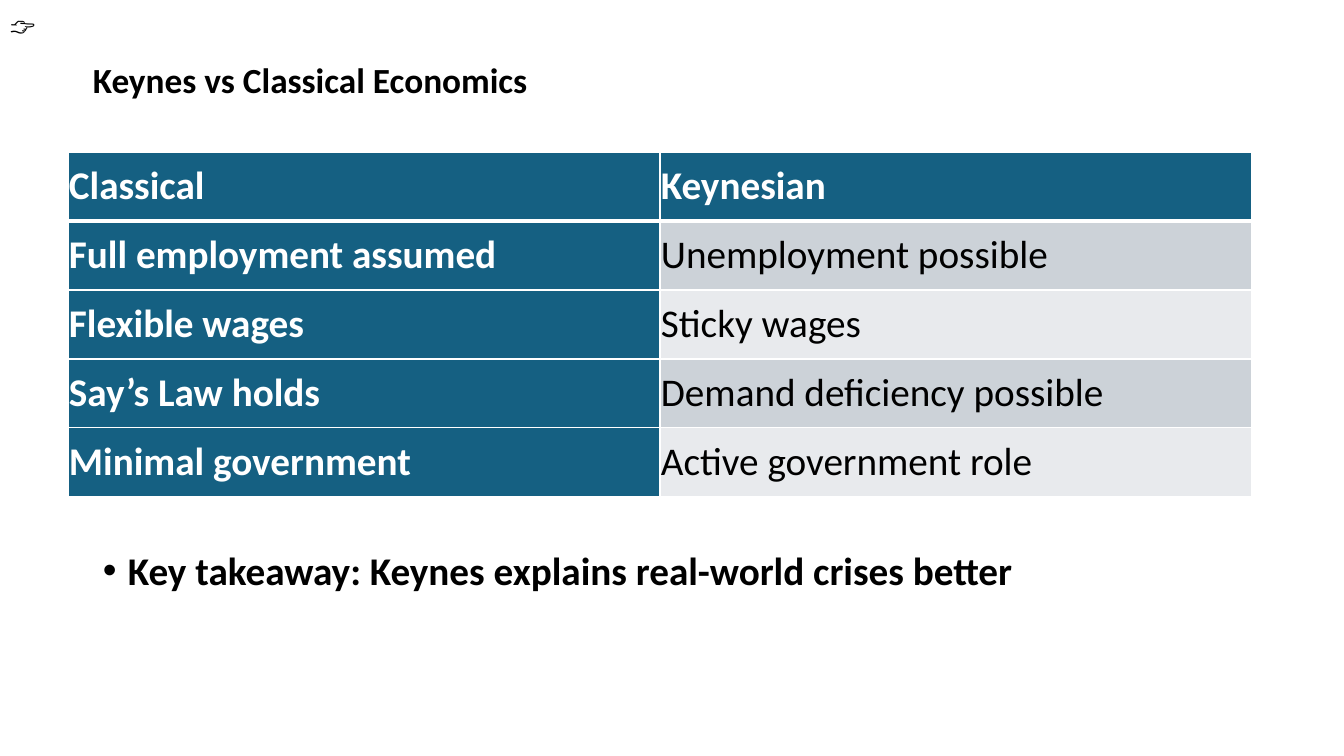
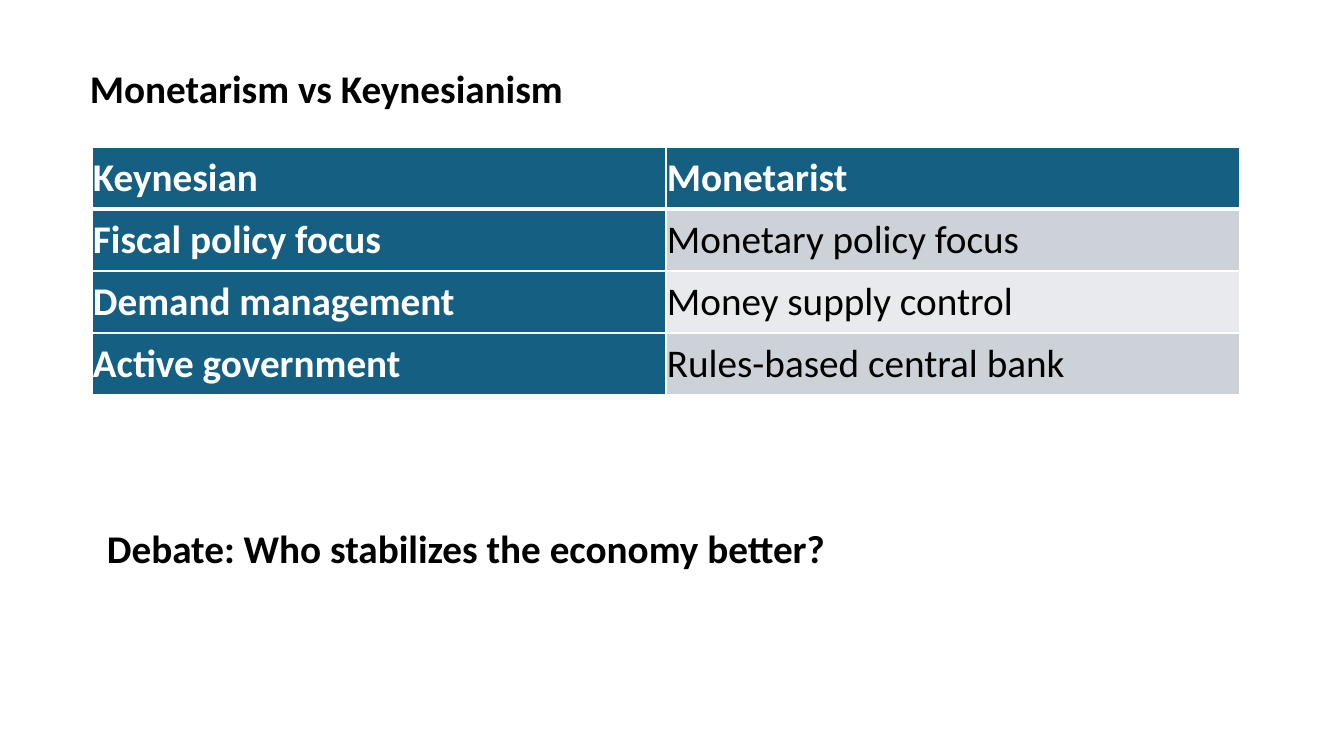
from lxml import etree
from pptx import Presentation
from pptx import util as u
from pptx.dml.color import RGBColor
from pptx.enum import text
from pptx.oxml import ns

PX = 914400 / 100.8
FONT = "Calibri"
WHITE, BLACK, TEAL = "FFFFFF", "000000", "156082"
BANDS = ["CCD2D8", "E8EAED"]
BODY_SIZE = 28


def px(length):
    return u.Emu(round(length * PX))


def colour(value):
    return RGBColor.from_string(value)


def add_span(para, words, size=BODY_SIZE, tint=BLACK, bold=True):
    span = para.add_run()
    span.text = words
    span.font.name = FONT
    span.font.size = u.Pt(size)
    span.font.bold = bold
    span.font.color.rgb = colour(tint)


def add_bullet(para, indent):
    properties = para._p.get_or_add_pPr()
    properties.set("marL", str(px(indent)))
    properties.set("indent", str(-px(indent)))
    bullet_font = etree.SubElement(properties, ns.qn("a:buFont"))
    bullet_font.set("typeface", "Arial")
    etree.SubElement(properties, ns.qn("a:buChar")).set("char", "•")


def add_line_of_text(page, left, top, width, height, words, size=BODY_SIZE, bullet=False):
    """Place one line of bold text, centred vertically in its box."""
    box = page.shapes.add_textbox(px(left), px(top), px(width), px(height))
    frame = box.text_frame
    frame.word_wrap = True
    frame.vertical_anchor = text.MSO_ANCHOR.MIDDLE
    para = frame.paragraphs[0]
    if bullet:
        add_bullet(para, 25)
    add_span(para, words, size)


def add_borders(cell, top, bottom):
    properties = cell._tc.get_or_add_tcPr()
    for side, points in (("L", 1), ("R", 1), ("T", top), ("B", bottom)):
        line = etree.SubElement(properties, ns.qn(f"a:ln{side}"))
        line.set("w", str(u.Pt(points)))
        fill = etree.SubElement(line, ns.qn("a:solidFill"))
        etree.SubElement(fill, ns.qn("a:srgbClr")).set("val", WHITE)


def style_cell(cell, words, row, column):
    is_heading = row == 0 or column == 0
    add_borders(cell, top=3 if row == 1 else 1, bottom=3 if row == 0 else 1)
    cell.fill.solid()
    cell.fill.fore_color.rgb = colour(TEAL if is_heading else BANDS[(row - 1) % 2])
    cell.margin_left = cell.margin_right = px(1)
    cell.margin_top = cell.margin_bottom = px(1)
    cell.vertical_anchor = text.MSO_ANCHOR.MIDDLE
    add_span(cell.text_frame.paragraphs[0], words,
             tint=WHITE if is_heading else BLACK, bold=is_heading)


def add_comparison(page, left, top, column_width, row_height, rows):
    """Place a table whose top row and first column are headings."""
    columns = len(rows[0])
    table = page.shapes.add_table(
        len(rows), columns, px(left), px(top),
        px(column_width * columns), px(row_height * len(rows))).table
    for column in table.columns:
        column.width = px(column_width)
    for r, entries in enumerate(rows):
        table.rows[r].height = px(row_height)
        for c, words in enumerate(entries):
            style_cell(table.cell(r, c), words, r, c)


def add_classical_page(page):
    add_line_of_text(page, 83, 43, 1169, 72, "Keynes vs Classical Economics", 25.2)
    add_line_of_text(page, 0, 5, 53, 40, "👉", 18)
    add_line_of_text(page, 93, 541, 1159, 58,
                     "Key takeaway: Keynes explains real-world crises better", bullet=True)
    add_comparison(page, 68, 152, 592, 69, [
        ("Classical", "Keynesian"),
        ("Full employment assumed", "Unemployment possible"),
        ("Flexible wages", "Sticky wages"),
        ("Say’s Law holds", "Demand deficiency possible"),
        ("Minimal government", "Active government role"),
    ])


def add_monetarist_page(page):
    add_line_of_text(page, 80, 59, 1171, 58, "Monetarism vs Keynesianism")
    add_comparison(page, 92, 147, 574, 62, [
        ("Keynesian", "Monetarist"),
        ("Fiscal policy focus", "Monetary policy focus"),
        ("Demand management", "Money supply control"),
        ("Active government", "Rules-based central bank"),
    ])
    add_line_of_text(page, 97, 519, 858, 58, "Debate: Who stabilizes the economy better?")


def main():
    deck = Presentation()
    deck.slide_width, deck.slide_height = px(1344), px(756)
    for fill_page in (add_classical_page, add_monetarist_page):
        fill_page(deck.slides.add_slide(deck.slide_layouts[6]))
    deck.save("out.pptx")


if __name__ == "__main__":
    main()
